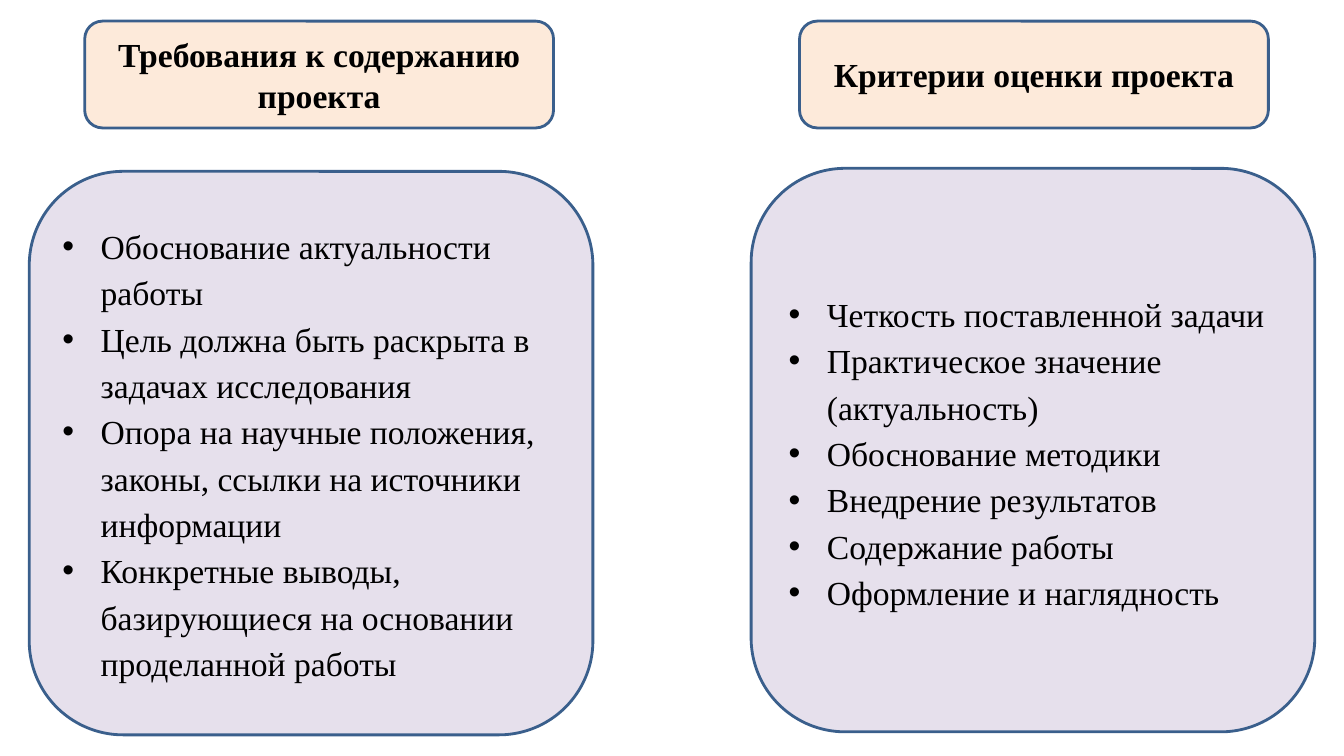
from dataclasses import dataclass

from lxml import etree
from pptx import Presentation
from pptx.dml.color import RGBColor
from pptx.enum.shapes import MSO_SHAPE
from pptx.enum.text import MSO_ANCHOR, PP_ALIGN
from pptx.oxml.ns import qn
from pptx.util import Inches, Pt

ROUNDED = MSO_SHAPE.ROUNDED_RECTANGLE
MIDDLE, TOP = MSO_ANCHOR.MIDDLE, MSO_ANCHOR.TOP
CENTER, LEFT = PP_ALIGN.CENTER, PP_ALIGN.LEFT

HEADER_TOP, HEADER_SIZE = 0.21, (4.65, 1.06)
PANEL_SIZE = (5.59, 5.59)

REQUIREMENTS = [
    "Обоснование актуальности работы",
    "Цель должна быть раскрыта в задачах исследования",
    "Опора на научные положения, законы, ссылки на источники информации",
    "Конкретные выводы, базирующиеся на основании проделанной работы",
]
CRITERIA = [
    "Четкость поставленной задачи",
    "Практическое значение (актуальность)",
    "Обоснование методики",
    "Внедрение результатов",
    "Содержание работы",
    "Оформление и наглядность",
]


@dataclass
class Theme:
    font: str = "Times New Roman"
    size: int = 24
    text: str = "000000"
    header: str = "FDEADA"
    panel: str = "E6E0EC"
    outline: str = "3A5F8C"
    outline_width: int = 2
    line_spacing: float = 1.15
    indent: float = 0.38


class SlideBuilder:
    def __init__(self, slide, theme):
        self.slide = slide
        self.theme = theme

    def box(self, left, top, size, fill):
        sp = self.slide.shapes.add_shape(
            ROUNDED, Inches(left), Inches(top), *map(Inches, size))
        sp.shadow.inherit = False
        sp.fill.solid()
        sp.fill.fore_color.rgb = RGBColor.from_string(fill)
        sp.line.color.rgb = RGBColor.from_string(self.theme.outline)
        sp.line.width = Pt(self.theme.outline_width)
        return sp

    def run(self, p, text, bold=False):
        r = p.add_run()
        r.text = text
        r.font.name = self.theme.font
        r.font.size = Pt(self.theme.size)
        r.font.bold = bold
        r.font.color.rgb = RGBColor.from_string(self.theme.text)

    def header(self, left, text):
        sp = self.box(left, HEADER_TOP, HEADER_SIZE, self.theme.header)
        tf = sp.text_frame
        tf.word_wrap = True
        tf.vertical_anchor = MIDDLE
        p = tf.paragraphs[0]
        p.alignment = CENTER
        self.run(p, text, bold=True)

    def panel(self, left, top):
        return self.box(left, top, PANEL_SIZE, self.theme.panel)

    def text_box(self, left, top, width, height):
        return self.slide.shapes.add_textbox(
            Inches(left), Inches(top), Inches(width), Inches(height))

    def bullets(self, sp, items, anchor):
        tf = sp.text_frame
        tf.word_wrap = True
        tf.vertical_anchor = anchor
        for i, item in enumerate(items):
            p = tf.add_paragraph() if i else tf.paragraphs[0]
            p.alignment = LEFT
            p.line_spacing = self.theme.line_spacing
            pPr = p._p.get_or_add_pPr()
            indent = Inches(self.theme.indent)
            pPr.set("marL", str(indent))
            pPr.set("indent", str(-indent))
            etree.SubElement(pPr, qn("a:buFont")).set("typeface", "Arial")
            etree.SubElement(pPr, qn("a:buChar")).set("char", "•")
            self.run(p, item)


def main():
    prs = Presentation()
    prs.slide_width, prs.slide_height = Inches(13.33), Inches(7.5)
    s = SlideBuilder(prs.slides.add_slide(prs.slide_layouts[6]), Theme())

    s.header(0.84, "Требования к содержанию проекта")
    s.header(7.93, "Критерии оценки проекта")
    s.panel(0.29, 1.7)
    s.bullets(s.text_box(0.52, 2.13, 5.51, 4.75), REQUIREMENTS, TOP)
    s.bullets(s.panel(7.45, 1.67), CRITERIA, MIDDLE)

    prs.save("out.pptx")


if __name__ == "__main__":
    main()
